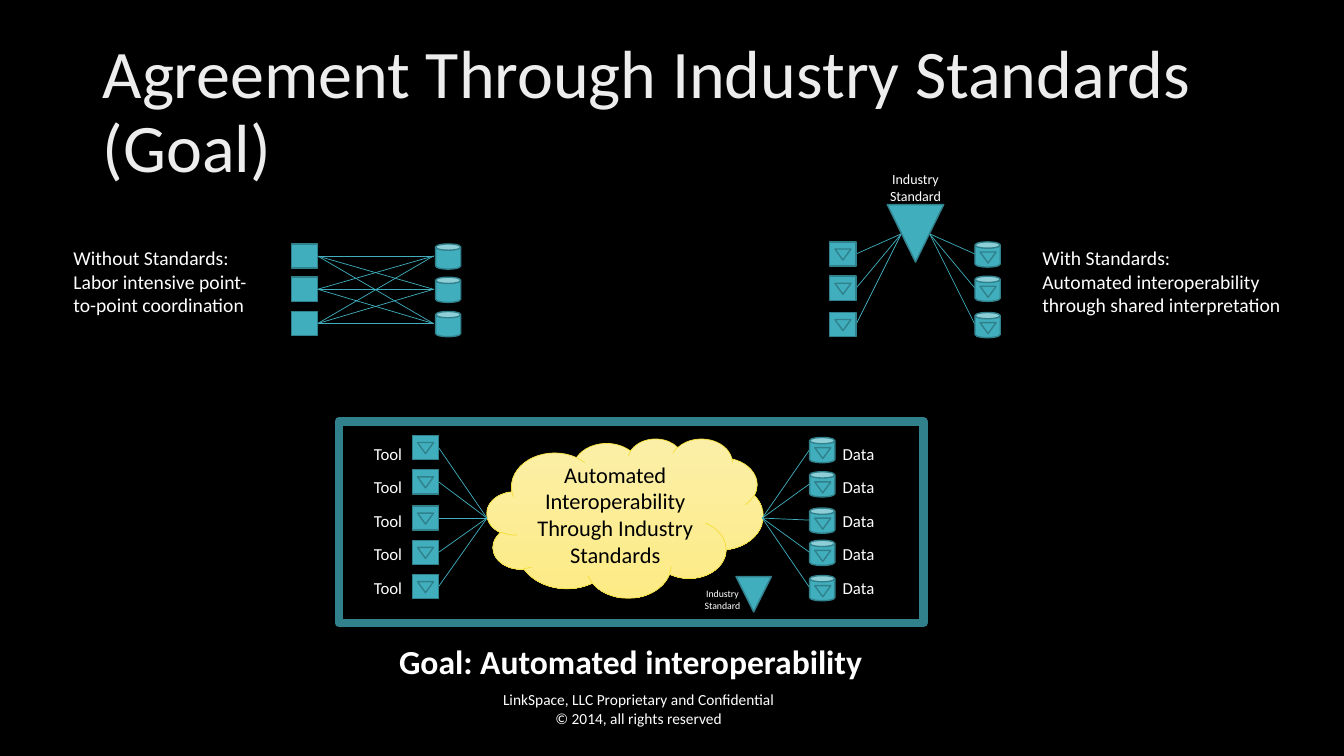
"""Build the slide on agreement through industry standards."""
from itertools import product

from lxml import etree
from pptx import Presentation
from pptx.dml.color import RGBColor
from pptx.enum.shapes import MSO_CONNECTOR, MSO_SHAPE as SHAPE
from pptx.enum.text import MSO_ANCHOR as ANCHOR, PP_ALIGN as ALIGN
from pptx.oxml.ns import qn
from pptx.util import Inches, Pt

TEAL, DARK_TEAL, WHITE = "41AEBD", "30818C", "FFFFFF"
color = RGBColor.from_string


def add_text(x, y, w, h, text, size, wrap=True, align=ALIGN.LEFT):
    tf = s.shapes.add_textbox(Inches(x), Inches(y), Inches(w), Inches(h)).text_frame
    tf.word_wrap = wrap
    tf.text = text
    for p in tf.paragraphs:
        p.alignment = align
        p.font.name, p.font.size = "Calibri", Pt(size)
        p.font.color.rgb = color(WHITE)
    return tf


def add_figure(kind, x, y, w, h, line=DARK_TEAL, width=1):
    sp = s.shapes.add_shape(kind, Inches(x), Inches(y), Inches(w), Inches(h))
    sp.shadow.inherit = False
    sp.fill.solid()
    sp.fill.fore_color.rgb = color(TEAL)
    sp.line.color.rgb = color(line)
    sp.line.width = Pt(width)
    if kind == SHAPE.ISOSCELES_TRIANGLE:
        sp.rotation = 180
    return sp


prs = Presentation()
prs.slide_width, prs.slide_height = Inches(13.33), Inches(7.5)
s = prs.slides.add_slide(prs.slide_layouts[6])
s.background.fill.solid()
s.background.fill.fore_color.rgb = color("000000")

title = add_text(0.92, 0.4, 11.5, 1.45, "Agreement Through Industry Standards (Goal)", 48.6)
title.vertical_anchor = ANCHOR.MIDDLE
title.paragraphs[0].line_spacing = 0.9
title.paragraphs[0].font.color.rgb = color("EDEDED")

cloud = add_figure(SHAPE.CLOUD, 4.83, 4.35, 2.74, 1.58, "F4DE3A", 0.5)
cloud.fill.gradient()
cloud.fill.gradient_angle = 270
for stop, shade in zip(cloud.fill.gradient_stops, ("FBEFA7", "FDEB85")):
    stop.color.rgb = color(shade)
tf = cloud.text_frame
tf.text = "Automated Interoperability Through Industry Standards"
p = tf.paragraphs[0]
p.alignment = ALIGN.CENTER
p.font.name, p.font.size = "Calibri", Pt(16)
p.font.color.rgb = color("000000")

plain_rows = (2.42, 2.75, 3.09)
tool_rows = (4.32, 4.66, 5.02, 5.36, 5.7)
data_rows = (4.34, 4.68, 5.04, 5.36, 5.71)
shared_rows = (2.4, 2.74, 3.1)

links = [(3.15, a + 0.12, 4.3, b + 0.12) for a, b in product(plain_rows, repeat=2)]
links += [(4.35, y + 0.12, 4.83, 5.14) for y in tool_rows]
links += [(8.03, y + 0.12, 7.56, 5.14) for y in data_rows]
links += [(hub, 2.32, end, y + 0.12)
          for hub, end in ((8.94, 8.49), (9.22, 9.67)) for y in shared_rows]
for x1, y1, x2, y2 in links:
    link = s.shapes.add_connector(MSO_CONNECTOR.STRAIGHT, Inches(x1), Inches(y1),
                                  Inches(x2), Inches(y2))
    link.line.color.rgb = color(TEAL)
    link.line.width = Pt(0.5)
    etree.SubElement(link._element.spPr, qn("a:effectLst"))

frame = add_figure(SHAPE.RECTANGLE, 3.36, 4.18, 5.8, 2, width=6)
frame.fill.background()

for y in plain_rows:
    add_figure(SHAPE.RECTANGLE, 2.89, y, 0.26, 0.24)
    add_figure(SHAPE.CAN, 4.32, y, 0.25, 0.25)

for x, rows in ((8.23, shared_rows), (4.09, tool_rows)):
    for y in rows:
        add_figure(SHAPE.RECTANGLE, x, y, 0.26, 0.24)
        add_figure(SHAPE.ISOSCELES_TRIANGLE, x + 0.05, y + 0.07, 0.16, 0.11)

for x, rows in ((9.67, shared_rows), (8.03, data_rows)):
    for y in rows:
        add_figure(SHAPE.CAN, x, y, 0.25, 0.25)
        add_figure(SHAPE.ISOSCELES_TRIANGLE, x + 0.05, y + 0.1, 0.16, 0.11)

add_figure(SHAPE.ISOSCELES_TRIANGLE, 8.8, 2.03, 0.56, 0.57)
add_figure(SHAPE.ISOSCELES_TRIANGLE, 7.3, 5.72, 0.35, 0.35)

for i in range(5):
    y = 4.35 + i * 1.33 / 4
    add_text(3.61, y, 0.5, 0.3, "Tool", 12, wrap=False)
    add_text(8.26, y, 0.54, 0.3, "Data", 12, wrap=False)

add_text(0.63, 2.39, 2.08, 0.81,
         "Without Standards:\vLabor intensive point-to-point coordination", 14)
add_text(10.24, 2.39, 2.6, 0.81,
         "With Standards:\vAutomated interoperability through shared interpretation", 14)
add_text(8.58, 1.64, 1, 0.44, "Industry Standard", 10, align=ALIGN.CENTER)
add_text(6.77, 5.78, 0.79, 0.34, "Industry Standard", 7, align=ALIGN.CENTER)

goal = add_text(3.86, 6.31, 5.03, 0.5, "Goal: Automated interoperability", 24, wrap=False)
goal.paragraphs[0].font.bold = True
add_text(3, 6.8, 6.67, 0.47,
         "LinkSpace, LLC Proprietary and Confidential\n© 2014, all rights reserved",
         11, align=ALIGN.CENTER)

prs.save("out.pptx")
